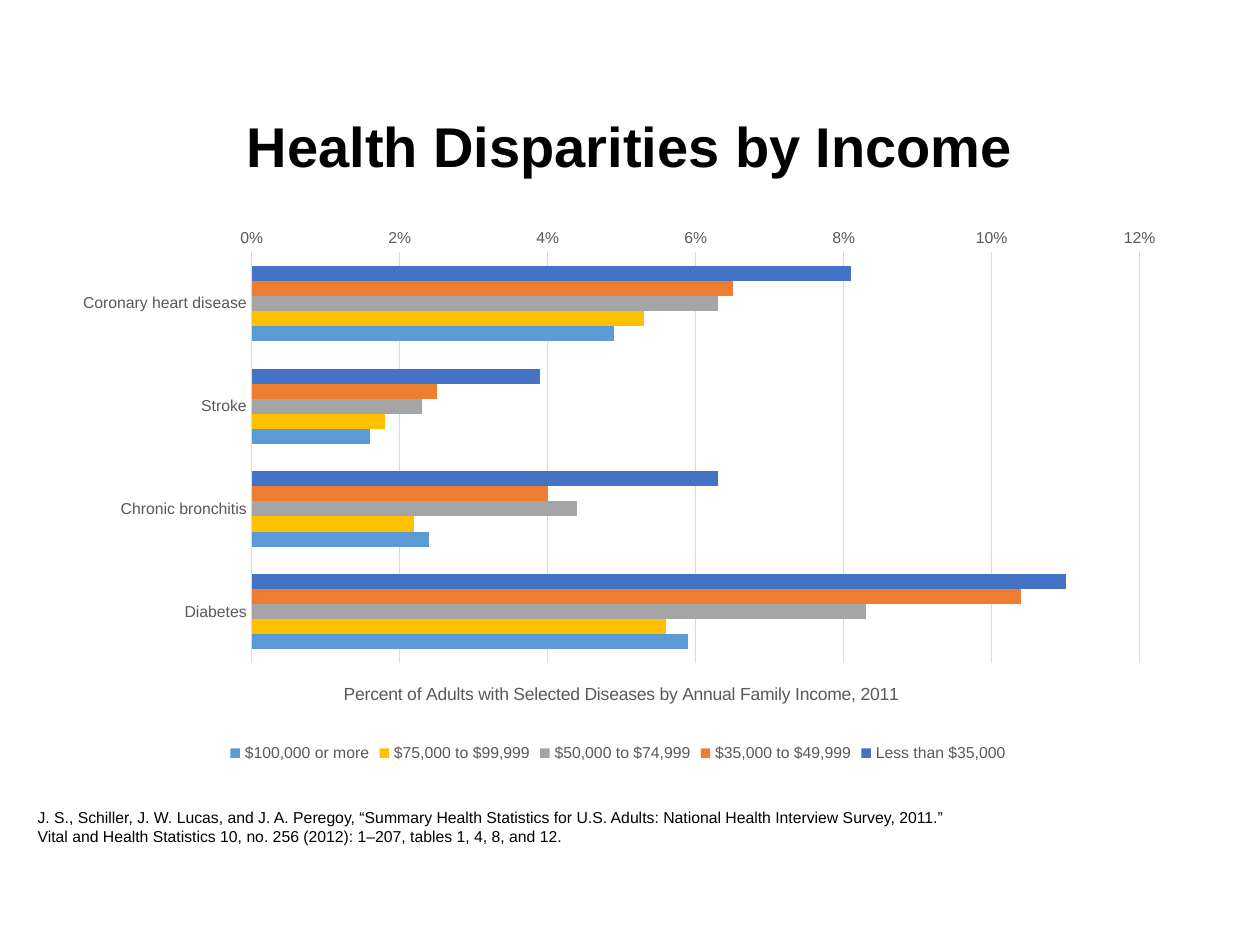
from pptx import Presentation
from pptx.util import Inches, Pt
from pptx.dml.color import RGBColor
from pptx.chart.data import CategoryChartData as Data
from pptx.enum.chart import XL_CHART_TYPE as Kind, XL_LEGEND_POSITION as Spot
from pptx.enum.chart import XL_TICK_MARK as Tick
from pptx.enum.text import PP_ALIGN as Align, MSO_ANCHOR as Anchor
from pptx.oxml import parse_xml
from pptx.oxml.ns import nsdecls, qn

BLACK = RGBColor(0, 0, 0)
GRAY = RGBColor(0x59, 0x59, 0x59)
PALE = RGBColor(0xD9, 0xD9, 0xD9)
BLUE = RGBColor(0x44, 0x72, 0xC4)
ORANGE = RGBColor(0xED, 0x7D, 0x31)
SILVER = RGBColor(0xA5, 0xA5, 0xA5)
GOLD = RGBColor(0xFF, 0xC0, 0x00)
SKY = RGBColor(0x5B, 0x9B, 0xD5)


def style(font, size, color, bold=False):
    font.name, font.size, font.bold = "Arial", Pt(size), bold
    font.color.rgb = color


def place(node, index, **share):
    """Fix a chart part at shares of the chart's size."""
    old = node.find(qn("c:layout"))
    if old is not None:
        node.remove(old)
    inner = '<c:layoutTarget val="inner"/>' if "w" in share else ""
    modes = "".join(f'<c:{k}Mode val="edge"/>' for k in "xy")
    sizes = "".join(f'<c:{k} val="{v}"/>' for k, v in share.items())
    node.insert(index, parse_xml(
        f'<c:layout {nsdecls("c")}><c:manualLayout>{inner}{modes}{sizes}'
        '</c:manualLayout></c:layout>'))


deck = Presentation()
deck.slide_width, deck.slide_height = Inches(10), Inches(7.5)
slide = deck.slides.add_slide(deck.slide_layouts[6])

# Title and source note
texts = [
    (["Health Disparities by Income"], (0.69, 0.8, 8.62, 0.7), 32, True,
     Align.CENTER, Anchor.MIDDLE),
    (["J. S., Schiller, J. W. Lucas, and J. A. Peregoy, “Summary Health "
      "Statistics for U.S. Adults: National Health Interview Survey, 2011.”",
      "Vital and Health Statistics 10, no. 256 (2012): 1–207, "
      "tables 1, 4, 8, and 12."],
     (0.2, 6.36, 9.6, 0.4), 9, False, Align.LEFT, Anchor.TOP),
]
for lines, box, size, bold, align, anchor in texts:
    frame = slide.shapes.add_textbox(*map(Inches, box)).text_frame
    frame.word_wrap, frame.vertical_anchor = True, anchor
    frame.text = "\n".join(lines)
    for para in frame.paragraphs:
        para.alignment = align
        style(para.font, size, BLACK, bold)

# Bar chart
groups = [
    ("Less than $35,000", BLUE, (0.081, 0.039, 0.063, 0.11)),
    ("$35,000 to $49,999", ORANGE, (0.065, 0.025, 0.04, 0.104)),
    ("$50,000 to $74,999", SILVER, (0.063, 0.023, 0.044, 0.083)),
    ("$75,000 to $99,999", GOLD, (0.053, 0.018, 0.022, 0.056)),
    ("$100,000 or more", SKY, (0.049, 0.016, 0.024, 0.059)),
]
data = Data(number_format="0%")
data.categories = ["Coronary heart disease", "Stroke",
                   "Chronic bronchitis", "Diabetes"]
for name, _, vals in groups:
    data.add_series(name, vals)
chart = slide.shapes.add_chart(
    Kind.BAR_CLUSTERED, *map(Inches, (0.5, 1.74, 8.81, 4.35)), data).chart
style(chart.font, 10, BLACK)
chart.has_title = False

plot = chart.plots[0]
plot.gap_width, plot.overlap, plot.vary_by_categories = 182, 0, False
for bars, (_, color, _) in zip(plot.series, groups):
    bars.format.fill.solid()
    bars.format.fill.fore_color.rgb = color
    bars.invert_if_negative = False

cats, vals = chart.category_axis, chart.value_axis
for axis in (cats, vals):
    axis.major_tick_mark = axis.minor_tick_mark = Tick.NONE
    style(axis.tick_labels.font, 9, GRAY)
cats.reverse_order = True
vals.minimum_scale, vals.maximum_scale, vals.major_unit = 0, 0.12, 0.02
vals.tick_labels.number_format = "0%"
vals.tick_labels.number_format_is_linked = False
vals.has_major_gridlines = True
vals.format.line.fill.background()
for line in (cats.format.line, vals.major_gridlines.format.line):
    line.color.rgb, line.width = PALE, Pt(0.75)

title = vals.axis_title.text_frame
title.text = "Percent of Adults with Selected Diseases by Annual Family Income, 2011"
style(title.paragraphs[0].runs[0].font, 10, GRAY)
place(chart.element.find(".//" + qn("c:valAx")).find(qn("c:title")), 1,
      x=0.25, y=0.84)
place(chart.element.find(".//" + qn("c:plotArea")), 0,
      x=0.17, y=0.06, w=0.8, h=0.75)

chart.has_legend = True
chart.legend.position, chart.legend.include_in_layout = Spot.BOTTOM, False
style(chart.legend.font, 9, GRAY)

deck.save("out.pptx")
